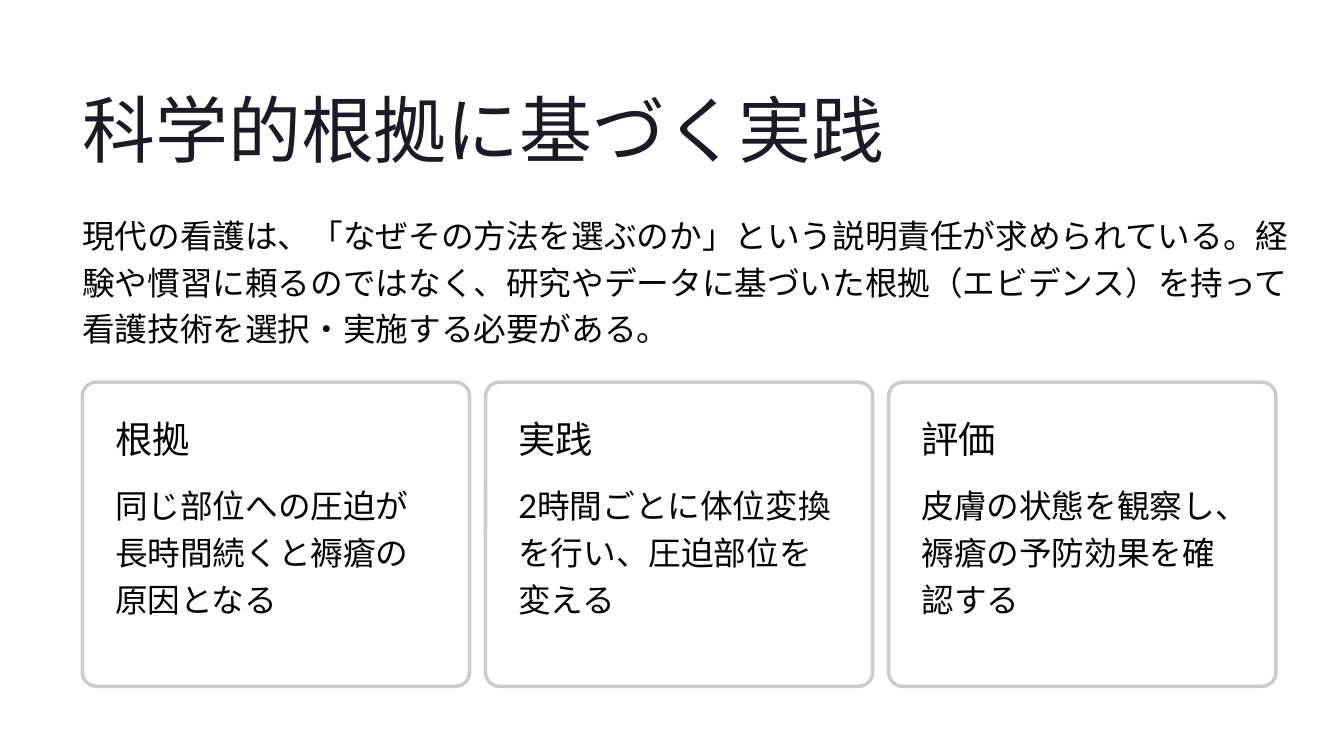
from pptx import Presentation
from pptx.dml.color import RGBColor
from pptx.enum.shapes import MSO_SHAPE as Shape
from pptx.oxml.ns import qn
from pptx.util import Inches, Pt
from lxml.etree import SubElement

TITLE = "科学的根拠に基づく実践"
INTRO = (
    "現代の看護は、「なぜその方法を選ぶのか」という説明責任が求められている。"
    "経験や慣習に頼るのではなく、研究やデータに基づいた根拠（エビデンス）を持って"
    "看護技術を選択・実施する必要がある。"
)
CARDS = [
    ("根拠", "同じ部位への圧迫が長時間続くと褥瘡の原因となる"),
    ("実践", "2時間ごとに体位変換を行い、圧迫部位を変える"),
    ("評価", "皮膚の状態を観察し、褥瘡の予防効果を確認する"),
]

LEFT = 0.98
CARD_TOP, CARD_WIDTH, CARD_HEIGHT, CARD_GAP = 4.55, 4.61, 3.62, 0.19
PADDING, TEXT_WIDTH = 0.39, 3.8
HEADING = dict(font="Inter", size=32, spacing=39, wrap=False)
BODY = dict(font="Lato", size=28, spacing=40)


def color(value):
    return RGBColor.from_string(value)


def add_text(page, text, left, top, width, height, *, font, size, spacing,
             ink="030303", wrap=True):
    box = page.shapes.add_textbox(Inches(left), Inches(top), Inches(width), Inches(height))
    frame = box.text_frame
    frame.margin_left = frame.margin_top = frame.margin_right = frame.margin_bottom = 0
    frame.word_wrap = wrap
    para = frame.paragraphs[0]
    para.line_spacing = Pt(spacing)
    span = para.add_run()
    span.text = text
    span.font.name = font
    span.font.size = Pt(size)
    span.font.color.rgb = color(ink)


def add_card(page, left, heading, body):
    card = page.shapes.add_shape(Shape.ROUNDED_RECTANGLE, Inches(left), Inches(CARD_TOP),
                                 Inches(CARD_WIDTH), Inches(CARD_HEIGHT))
    card.adjustments[0] = 0.046
    card.shadow.inherit = False
    card.fill.solid()
    card.fill.fore_color.rgb = color("FFFFFF")
    fill = card.fill._xPr.find(qn("a:solidFill"))
    SubElement(fill[0], qn("a:alpha"), val="95000")
    card.line.color.rgb = color("CCCCCC")
    card.line.width = Pt(3)
    text_left = left + PADDING
    add_text(page, heading, text_left, CARD_TOP + PADDING, TEXT_WIDTH, 0.61, **HEADING)
    add_text(page, body, text_left, CARD_TOP + 1.15, TEXT_WIDTH, 1.89, **BODY)


def main():
    deck = Presentation()
    deck.slide_width, deck.slide_height = Inches(16), Inches(9)
    page = deck.slides.add_slide(deck.slide_layouts[6])
    add_text(page, TITLE, LEFT, 0.96, 9.6, 1.09, font="Inter", size=62.5,
             spacing=78.5, ink="1B1B27", wrap=False)
    add_text(page, INTRO, LEFT, 2.48, 14.56, 1.89, **BODY)
    for index, (heading, body) in enumerate(CARDS):
        add_card(page, LEFT + index * (CARD_WIDTH + CARD_GAP), heading, body)
    deck.save("out.pptx")


if __name__ == "__main__":
    main()
